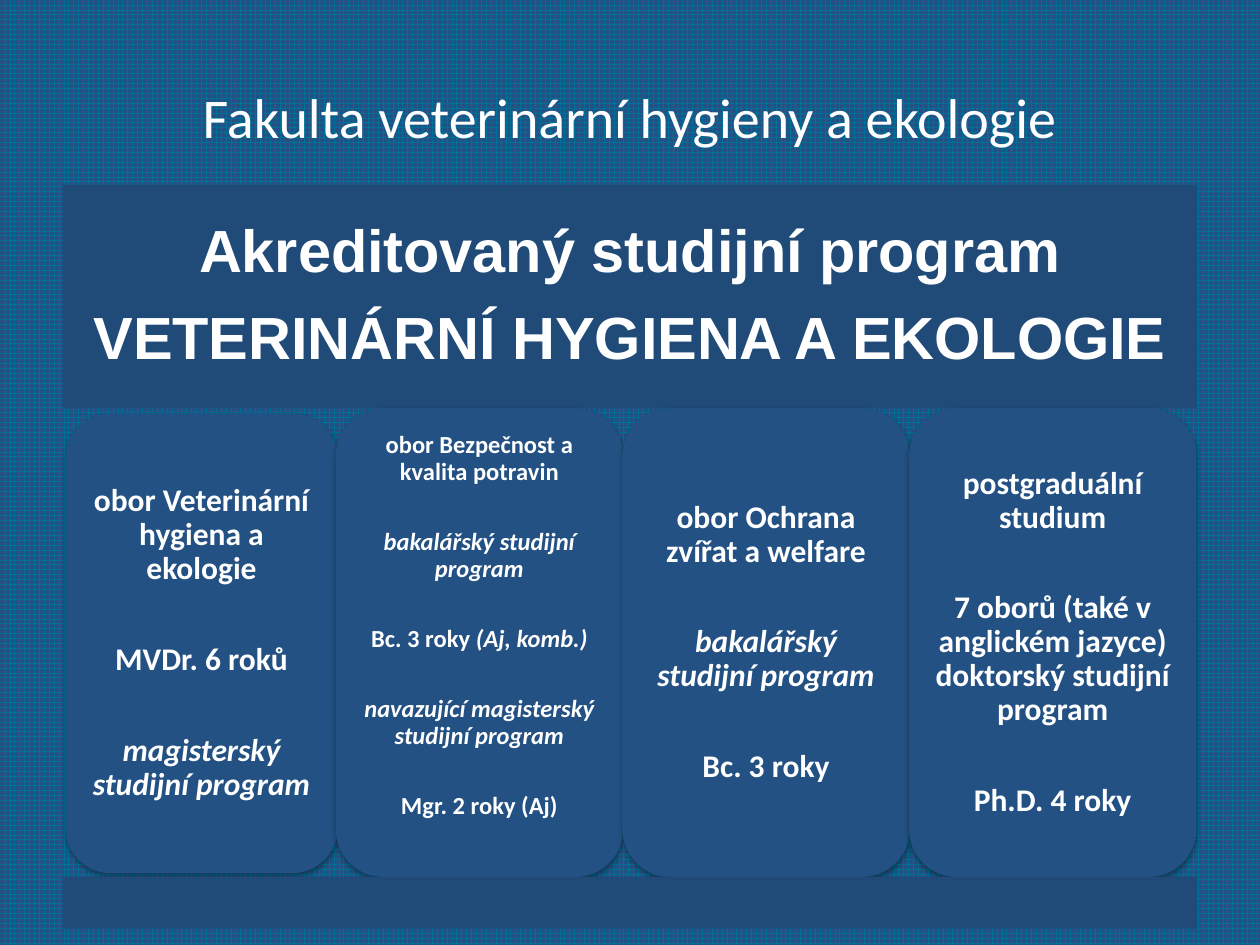
from dataclasses import dataclass

from lxml import etree
from pptx import Presentation, util as u
from pptx.dml.color import RGBColor as Rgb
from pptx.enum import dml, shapes, text
from pptx.oxml import ns


@dataclass(frozen=True)
class Theme:
    grid: str = "006F96"
    base: str = "235183"
    bar: str = "204A77"
    ink: str = "FFFFFF"
    face: str = "Calibri"
    bold_face: str = "Arial"
    title: float = 32
    head: float = 34
    body: float = 18
    small: float = 14


@dataclass(frozen=True)
class Box:
    x: float
    y: float
    w: float
    h: float

    def emu(self) -> tuple:
        return tuple(u.Inches(v) for v in (self.x, self.y, self.w, self.h))


@dataclass(frozen=True)
class Run:
    words: str
    slant: bool = False


@dataclass(frozen=True)
class Card:
    box: Box
    lines: list
    size: float
    gap: float
    pad: float = 0.07
    foot: float = 0.07


T = Theme()
WIDE, STEP = 2.28, 2.275


def slot(col: int) -> Box:
    return Box(0.39 + col * STEP, 3.24, WIDE, 3.72)


CARDS = [
    Card(Box(0.52, 3.28, 2.16, 3.65), [
        [Run("obor Veterinární hygiena a ekologie")],
        [Run("MVDr. 6 roků")],
        [Run("magisterský studijní program", True)],
    ], T.body, 32.4),
    Card(slot(1), [
        [Run("obor Bezpečnost a kvalita potravin")],
        [Run("bakalářský studijní program", True)],
        [Run("Bc. 3 roky "), Run("(Aj, komb.)", True)],
        [Run("navazující magisterský studijní program", True)],
        [Run("Mgr. 2 roky (Aj)")],
    ], T.small, 25, 0.06, 0.32),
    Card(slot(2), [
        [Run("obor Ochrana zvířat a welfare")],
        [Run("bakalářský studijní program", True)],
        [Run("Bc. 3 roky")],
    ], T.body, 32.4),
    Card(slot(3), [
        [Run("postgraduální studium")],
        [Run("7 oborů (také v anglickém jazyce) doktorský studijní program")],
        [Run("Ph.D. 4 roky")],
    ], T.body, 32.4),
]


def write(shape, lines: list, *, size: float, face: str = T.face, bold: bool = True,
          gap: float = 0, lead: float = 0.9, pad: float = 0.1, foot: float = 0.1) -> None:
    frame = shape.text_frame
    frame.word_wrap = True
    frame.vertical_anchor = text.MSO_ANCHOR.MIDDLE
    frame.margin_left = frame.margin_right = frame.margin_top = u.Inches(pad)
    frame.margin_bottom = u.Inches(foot)
    for i, line in enumerate(lines):
        para = frame.add_paragraph() if i else frame.paragraphs[0]
        para.alignment = text.PP_ALIGN.CENTER
        para.line_spacing = lead
        para.space_before = u.Pt(gap if i else 0)
        for part in line:
            run = para.add_run()
            run.text = part.words
            font = run.font
            font.name, font.size = face, u.Pt(size)
            font.bold, font.italic = bold, part.slant
            font.color.rgb = Rgb.from_string(T.ink)


def block(slide, kind, box: Box, fill: str):
    shape = slide.shapes.add_shape(kind, *box.emu())
    shape.shadow.inherit = False
    shape.fill.solid()
    shape.fill.fore_color.rgb = Rgb.from_string(fill)
    shape.line.fill.background()
    return shape


def shade(shape) -> None:
    root = shape._element.spPr.find(ns.qn("a:effectLst"))
    drop = etree.SubElement(root, ns.qn("a:outerShdw"), blurRad=str(u.Pt(3.1)),
                            dist=str(u.Pt(1.8)), dir="5400000", rotWithShape="0")
    tint = etree.SubElement(drop, ns.qn("a:srgbClr"), val="000000")
    etree.SubElement(tint, ns.qn("a:alpha"), val="35000")


def main() -> None:
    """Build the faculty study programme slide."""
    deck = Presentation()
    deck.slide_width, deck.slide_height = u.Inches(10), u.Inches(7.5)
    slide = deck.slides.add_slide(deck.slide_layouts[6])
    back = slide.background.fill
    back.patterned()
    back.pattern = dml.MSO_PATTERN.LARGE_GRID
    back.fore_color.rgb = Rgb.from_string(T.grid)
    back.back_color.rgb = Rgb.from_string(T.base)

    title = slide.shapes.add_textbox(*Box(0.5, 0.3, 9, 1.25).emu())
    write(title, [[Run("Fakulta veterinární hygieny a ekologie")]],
          size=T.title, bold=False, lead=1)

    rect, round_rect = shapes.MSO_SHAPE.RECTANGLE, shapes.MSO_SHAPE.ROUNDED_RECTANGLE
    head = block(slide, rect, Box(0.5, 1.47, 9, 1.77), T.bar)
    write(head, [[Run("Akreditovaný studijní program")],
                 [Run("VETERINÁRNÍ HYGIENA A EKOLOGIE")]],
          size=T.head, face=T.bold_face, gap=13.4, pad=0.14, foot=0.14)

    for card in CARDS:
        shape = block(slide, round_rect, card.box, T.base)
        shade(shape)
        write(shape, card.lines, size=card.size, gap=card.gap,
              pad=card.pad, foot=card.foot)

    block(slide, rect, Box(0.5, 6.96, 9, 0.41), T.bar)
    deck.save("out.pptx")


if __name__ == "__main__":
    main()
